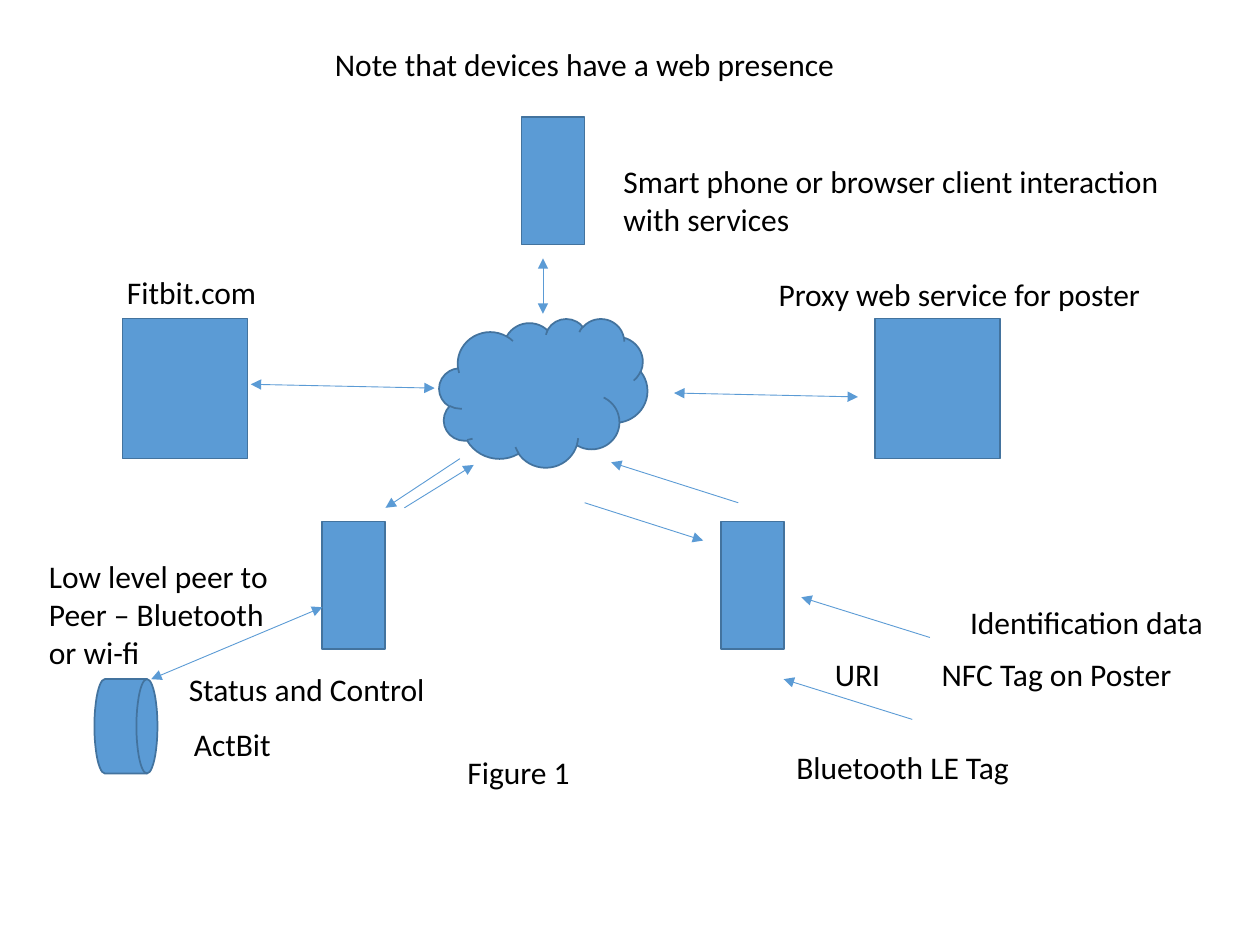
import pptx
import pptx.dml.color
import pptx.enum.shapes
import pptx.enum.text
import pptx.oxml.ns
import pptx.util
from lxml import etree

Pt = pptx.util.Pt
SHAPE = pptx.enum.shapes.MSO_SHAPE
BLUE = pptx.dml.color.RGBColor(0x5B, 0x9B, 0xD5)
DARK_BLUE = pptx.dml.color.RGBColor(0x43, 0x73, 0x9E)
BLACK = pptx.dml.color.RGBColor(0, 0, 0)

PHONE_SIZE = (36, 72.8)
SERVER_SIZE = (71.4, 80)

# Kind, left, top, (width, height)
NODES = [
    (SHAPE.RECTANGLE, 298, 67, PHONE_SIZE),
    (SHAPE.RECTANGLE, 184.2, 298, PHONE_SIZE),
    (SHAPE.RECTANGLE, 412, 298, PHONE_SIZE),
    (SHAPE.RECTANGLE, 70, 182, SERVER_SIZE),
    (SHAPE.RECTANGLE, 500, 182, SERVER_SIZE),
    (SHAPE.CLOUD, 251, 182, (119, 85)),
    (SHAPE.FLOWCHART_DIRECT_ACCESS_STORAGE, 54, 388, (36, 54)),
]

# Start, end, arrowheads at both ends
ARROWS = [
    ((310.3, 179.3), (310.3, 147.6), True),    # cloud - client
    ((143.3, 219.6), (248.4, 221.8), True),    # web service - cloud
    ((385.2, 224.6), (490.3, 226.8), True),    # cloud - proxy
    ((86.4, 388.1), (184.2, 347), True),       # tracker - phone
    ((231.1, 290.2), (270.7, 265.7), False),   # left phone to cloud
    ((262.8, 262.1), (220.3, 290.2), False),   # cloud to left phone
    ((421.9, 287.3), (349.2, 264.2), False),   # right phone to cloud
    ((334.1, 287.3), (401.8, 308.9), False),   # cloud to right phone
    ((531.4, 364.3), (457.9, 341.3), False),   # NFC tag to phone
    ((521.3, 411.1), (447.8, 388.1), False),   # Bluetooth tag to phone
]

# Left, top, width, lines of text
LABELS = [
    (184.3, 22, 304, ["Note that devices have a web presence"]),
    (349.2, 89, 328.3, ["Smart phone or browser client interaction",
                        "with services"]),
    (65.5, 152.4, 89.3, ["Fitbit.com"]),
    (437.8, 153.5, 224, ["Proxy web service for poster"]),
    (20.9, 314.8, 141, ["Low level peer to", "Peer – Bluetooth", "or wi-fi"]),
    (100.8, 379.4, 150.5, ["Status and Control"]),
    (103.7, 411, 66, ["ActBit"]),
    (260, 427, 73.4, ["Figure 1"]),
    (547.2, 341.3, 149.8, ["Identification data"]),
    (470, 371, 40.3, ["URI"]),
    (531, 371, 147.6, ["NFC Tag on Poster"]),
    (448, 424, 137.5, ["Bluetooth LE Tag"]),
]


def add_node(s, kind, left, top, size):
    node = s.shapes.add_shape(kind, Pt(left), Pt(top), *map(Pt, size))
    node.shadow.inherit = False
    node.fill.solid()
    node.fill.fore_color.rgb = BLUE
    node.line.color.rgb = DARK_BLUE
    node.line.width = Pt(1)


def add_arrow(s, start, end, both):
    line = s.shapes.add_connector(
        pptx.enum.shapes.MSO_CONNECTOR.STRAIGHT, *map(Pt, start + end))
    line.line.color.rgb = BLUE
    line.line.width = Pt(0.5)
    ln = line.line._get_or_add_ln()
    for tag in ["a:headEnd", "a:tailEnd"] if both else ["a:tailEnd"]:
        etree.SubElement(ln, pptx.oxml.ns.qn(tag), type="triangle")
    etree.SubElement(line._element.spPr, pptx.oxml.ns.qn("a:effectLst"))


def add_label(s, left, top, width, lines):
    height = 7.2 + 21.8 * len(lines)
    sp = s.shapes.add_textbox(Pt(left), Pt(top), Pt(width), Pt(height))
    tf = sp.text_frame
    tf.word_wrap = False
    tf.auto_size = pptx.enum.text.MSO_AUTO_SIZE.SHAPE_TO_FIT_TEXT
    tf.text = "\n".join(lines)
    for p in tf.paragraphs:
        for r in p.runs:
            r.font.name = "Calibri"
            r.font.size = Pt(18)
            r.font.color.rgb = BLACK


def main():
    prs = pptx.Presentation()
    prs.slide_width, prs.slide_height = Pt(720), Pt(540)
    s = prs.slides.add_slide(prs.slide_layouts[6])

    # Devices, services and the cloud
    for node in NODES:
        add_node(s, *node)

    # Data flows
    for arrow in ARROWS:
        add_arrow(s, *arrow)

    # Captions
    for label in LABELS:
        add_label(s, *label)

    prs.save("out.pptx")


if __name__ == "__main__":
    main()
